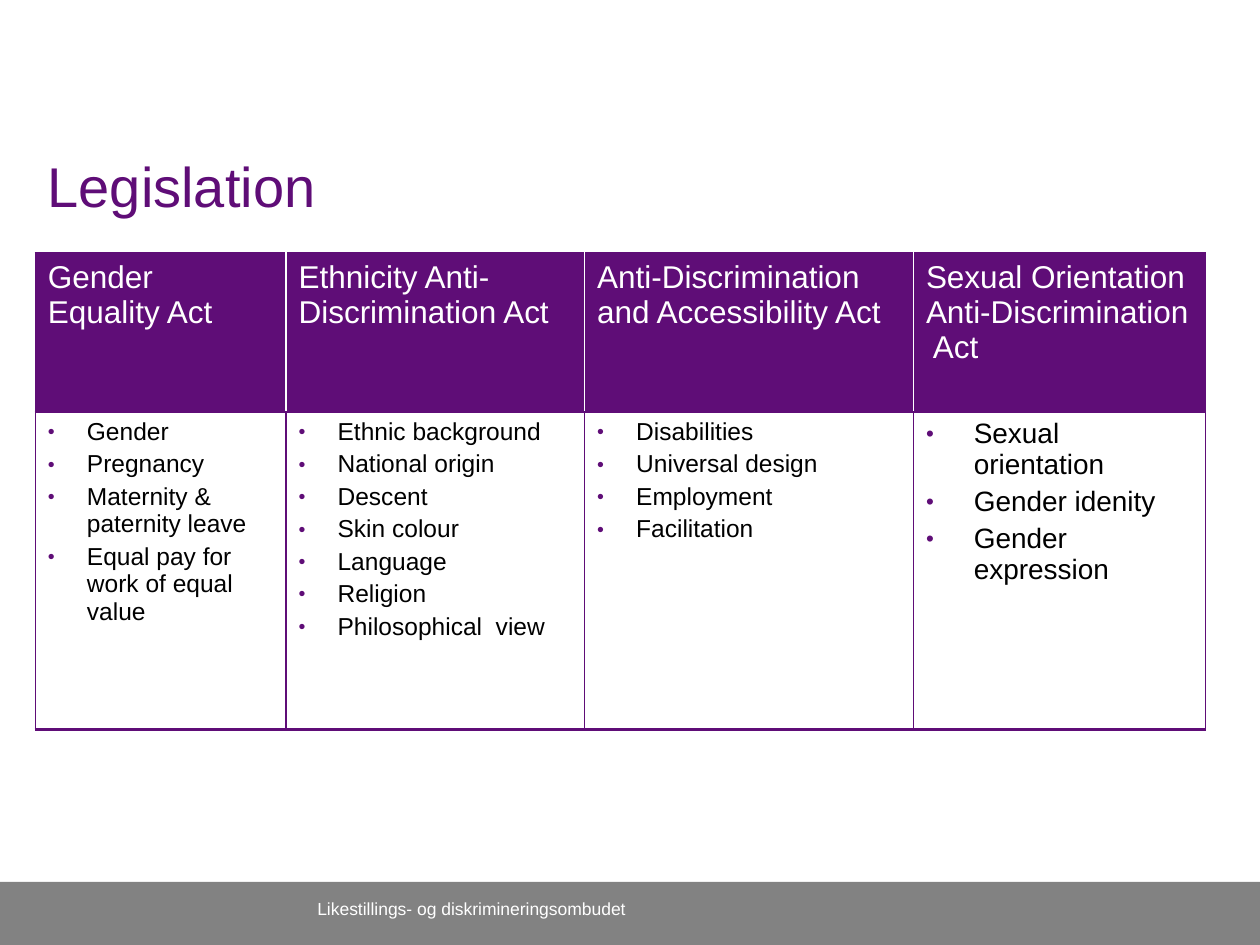
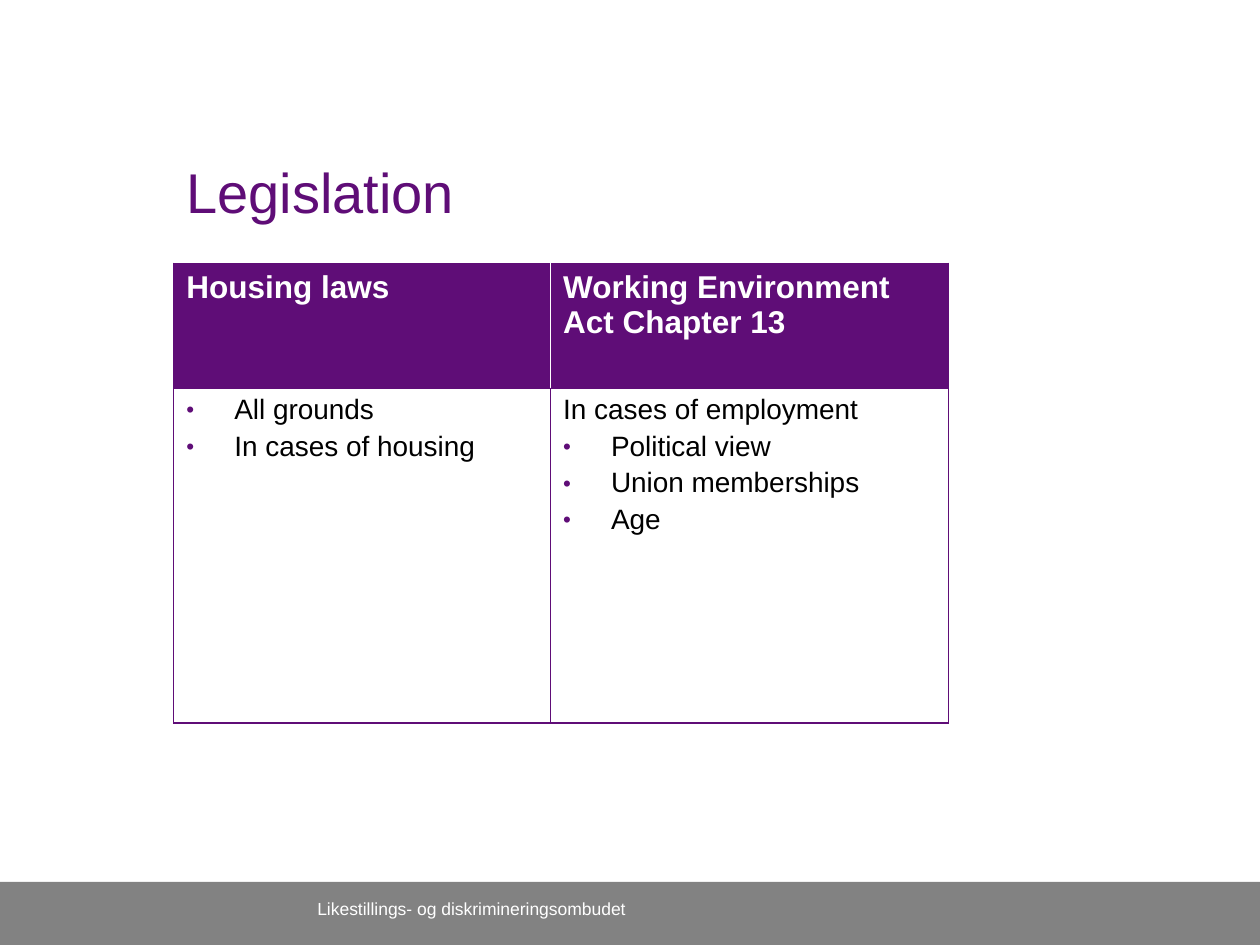
"""Build two slides on Norwegian anti-discrimination legislation."""
from lxml import etree
from pptx import Presentation, util as u
from pptx.dml.color import RGBColor
from pptx.enum import shapes, text
from pptx.oxml.ns import qn

HUES = {"plum": "5F0D77", "grey": "828282", "white": "FFFFFF", "black": "000000"}
FONT = "Arial"
COLS, ROWS = 100, 75
INDENT = {14: 3.1, 16: 3.8}


class Deck:
    def __init__(self):
        self.prs = Presentation()
        self.prs.slide_width, self.prs.slide_height = u.Inches(10), u.Inches(7.5)
        self.slide = None

    def x(self, cols):
        return round(self.prs.slide_width * cols / COLS)

    def y(self, rows):
        return round(self.prs.slide_height * rows / ROWS)

    def box(self, left, top, width, height):
        return self.x(left), self.y(top), self.x(width), self.y(height)

    def hue(self, name):
        return RGBColor.from_string(HUES[name])

    def style(self, para, size, hue, bold=False):
        font = para.font
        font.name, font.size, font.bold = FONT, u.Pt(size), bold
        font.color.rgb = self.hue(hue)

    def page(self):
        self.slide = self.prs.slides.add_slide(self.prs.slide_layouts[6])
        self.band(0, 70, 100, 5)
        self.label("Likestillings- og diskrimineringsombudet", (24.2, 70.8, 31.7, 3.3), 10, "white")

    def band(self, *area):
        bar = self.slide.shapes.add_shape(shapes.MSO_SHAPE.RECTANGLE, *self.box(*area))
        bar.shadow.inherit = False
        bar.fill.solid()
        bar.fill.fore_color.rgb = self.hue("grey")
        bar.line.fill.background()

    def label(self, words, area, size, hue, inset=0.05):
        frame = self.slide.shapes.add_textbox(*self.box(*area)).text_frame
        frame.word_wrap = True
        frame.vertical_anchor = text.MSO_ANCHOR.TOP
        frame.margin_top = u.Inches(inset)
        frame.text = words
        self.style(frame.paragraphs[0], size, hue)

    def title(self, words, left, top, width):
        self.label(words, (left, top, width, 9.2), 32, "plum", 0.1)

    def bullet(self, para, size):
        props = para._p.get_or_add_pPr()
        gap = self.x(INDENT[size])
        props.set("marL", str(gap))
        props.set("indent", str(-gap))
        tint = etree.SubElement(props, qn("a:buClr"))
        etree.SubElement(tint, qn("a:srgbClr"), val=HUES["plum"])
        etree.SubElement(props, qn("a:buSzPct"), val="80000")
        etree.SubElement(props, qn("a:buFont"), typeface=FONT)
        etree.SubElement(props, qn("a:buChar"), char="•")

    def edge(self, cell, side, hue, width):
        line = etree.SubElement(cell._tc.get_or_add_tcPr(), qn("a:ln" + side), w=str(u.Pt(width)))
        fill = etree.SubElement(line, qn("a:solidFill"))
        etree.SubElement(fill, qn("a:srgbClr"), val=HUES[hue])

    def paint(self, cell, fill, sides):
        for side, (hue, width) in zip("LRTB", sides):
            self.edge(cell, side, hue, width)
        cell.fill.solid()
        cell.fill.fore_color.rgb = self.hue(fill)

    def head(self, cell, words, first, last, bold):
        rim, seam = ("plum", 0.75), ("white", 1)
        self.paint(cell, "plum", (rim if first else seam, rim if last else seam, ("plum", 1), rim))
        cell.text = words
        self.style(cell.text_frame.paragraphs[0], 18, "white", bold)

    def body(self, cell, items, size, lead):
        rim = ("plum", 0.75)
        self.paint(cell, "white", (rim, rim, rim, ("plum", 1.5)))
        cell.text = "\n".join(items)
        for n, para in enumerate(cell.text_frame.paragraphs):
            if n or not lead:
                self.bullet(para, size)
            if n:
                para.space_before = u.Pt(0.2 * size)
            self.style(para, size, "black")

    def table(self, left, top, widths, heights, acts, bold=False):
        area = self.box(left, top, sum(widths), sum(heights))
        grid = self.slide.shapes.add_table(2, len(acts), *area).table
        grid.horz_banding = False
        for row, height in zip(grid.rows, heights):
            row.height = self.y(height)
        for n, (name, items, size, lead) in enumerate(acts):
            grid.columns[n].width = self.x(widths[n])
            self.head(grid.cell(0, n), name, n == 0, n == len(acts) - 1, bold)
            self.body(grid.cell(1, n), items, size, lead)


GROUNDS = [
    ("Gender Equality Act",
     ["Gender", "Pregnancy", "Maternity & paternity leave",
      "Equal pay for work of equal value"], 14, False),
    ("Ethnicity Anti- Discrimination Act",
     ["Ethnic background", "National origin", "Descent", "Skin colour",
      "Language", "Religion", "Philosophical  view"], 14, False),
    ("Anti-Discrimination and Accessibility Act",
     ["Disabilities", "Universal design", "Employment", "Facilitation"], 14, False),
    ("Sexual Orientation Anti-Discrimination  Act",
     ["Sexual orientation", "Gender idenity", "Gender expression"], 16, False),
]
OTHERS = [
    ("Housing laws", ["All grounds", "In cases of housing"], 16, False),
    ("Working Environment Act Chapter 13",
     ["In cases of employment", "Political view", "Union memberships", "Age"], 16, True),
]


def main():
    deck = Deck()
    deck.page()
    deck.title("Legislation", 2.8, 11, 92.9)
    deck.table(2.8, 20.1, (19.9, 23.7, 26.1, 23.2), (12.6, 25.2), GROUNDS)
    deck.page()
    deck.title("Legislation", 13.8, 11.5, 61.4)
    deck.table(13.8, 20.9, (29.9, 31.6), (9.9, 26.6), OTHERS, bold=True)
    deck.prs.save("out.pptx")


if __name__ == "__main__":
    main()
